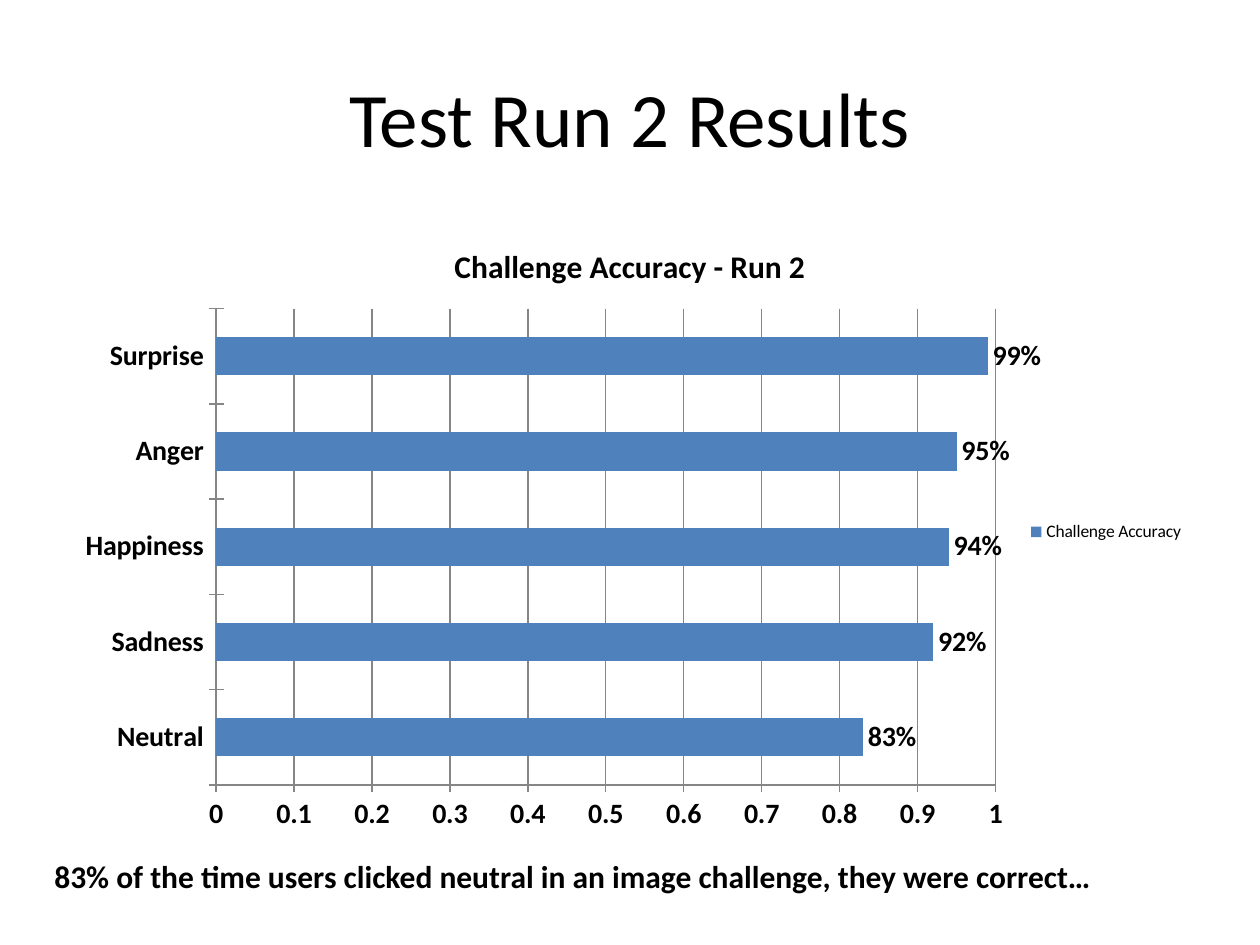
"""Build the Test Run 2 results slide with its accuracy bar chart."""
from pptx import Presentation
from pptx.chart.data import CategoryChartData
from pptx.dml.color import RGBColor
from pptx.enum.chart import XL_CHART_TYPE, XL_LABEL_POSITION, XL_LEGEND_POSITION, XL_TICK_MARK
from pptx.enum.text import MSO_ANCHOR, MSO_AUTO_SIZE, PP_ALIGN
from pptx.util import Emu, Pt

BAR = XL_CHART_TYPE.BAR_CLUSTERED
OUTSIDE_END = XL_LABEL_POSITION.OUTSIDE_END
RIGHT = XL_LEGEND_POSITION.RIGHT
CROSS = XL_TICK_MARK.CROSS
MIDDLE = MSO_ANCHOR.MIDDLE
GROW = MSO_AUTO_SIZE.SHAPE_TO_FIT_TEXT
CENTER = PP_ALIGN.CENTER

SCALE = 914400 / 126
COLORS = {"text": "000000", "bar": "4F81BD", "line": "868686"}
ACCURACY = {"Neutral": 0.83, "Sadness": 0.92, "Happiness": 0.94, "Anger": 0.95, "Surprise": 0.99}


def px(*lengths):
    return [Emu(round(length * SCALE)) for length in lengths]


def style_font(font, size, bold=False):
    for name, value in {"name": "Calibri", "size": Pt(size), "bold": bold}.items():
        setattr(font, name, value)
    font.color.rgb = RGBColor.from_string(COLORS["text"])


deck = Presentation()
deck.slide_width, deck.slide_height = px(1260, 945)
page = deck.slides.add_slide(deck.slide_layouts[5])

title = page.shapes.title
title.left, title.top, title.width, title.height = px(63, 38, 1134, 157)
title.text_frame.text = "Test Run 2 Results"
title.text_frame.vertical_anchor = MIDDLE
para = title.text_frame.paragraphs[0]
para.alignment = CENTER
style_font(para.runs[0].font, 44)

data = CategoryChartData(number_format="General")
data.categories = list(ACCURACY)
data.add_series("Challenge Accuracy", list(ACCURACY.values()))
chart = page.shapes.add_chart(BAR, *px(63, 220, 1134, 624), data).chart
style_font(chart.font, 10)

chart.has_title = True
chart.chart_title.include_in_layout = False
heading = chart.chart_title.text_frame
heading.text = "Challenge Accuracy - Run 2"
style_font(heading.paragraphs[0].runs[0].font, 18, True)

chart.has_legend = True
chart.legend.position = RIGHT
chart.legend.include_in_layout = False
style_font(chart.legend.font, 10)

for axis in (chart.category_axis, chart.value_axis):
    axis.major_tick_mark = CROSS
    axis.format.line.color.rgb = RGBColor.from_string(COLORS["line"])
    style_font(axis.tick_labels.font, 16, True)

value_axis = chart.value_axis
for name, value in {"minimum_scale": 0, "maximum_scale": 1, "major_unit": 0.1,
                    "has_major_gridlines": True}.items():
    setattr(value_axis, name, value)
value_axis.major_gridlines.format.line.color.rgb = RGBColor.from_string(COLORS["line"])

plot = chart.plots[0]
plot.gap_width = 150
plot.vary_by_categories = False
bars = plot.series[0]
bars.format.fill.solid()
bars.format.fill.fore_color.rgb = RGBColor.from_string(COLORS["bar"])

labels = bars.data_labels
for name, value in {"show_value": True, "number_format": "0%", "number_format_is_linked": False,
                    "position": OUTSIDE_END}.items():
    setattr(labels, name, value)
style_font(labels.font, 16, True)

caption = page.shapes.add_textbox(*px(42, 851, 1081, 50)).text_frame
caption.word_wrap = True
caption.auto_size = GROW
caption.text = "83% of the time users clicked neutral in an image challenge, they were correct…"
style_font(caption.paragraphs[0].runs[0].font, 18, True)

deck.save("out.pptx")
